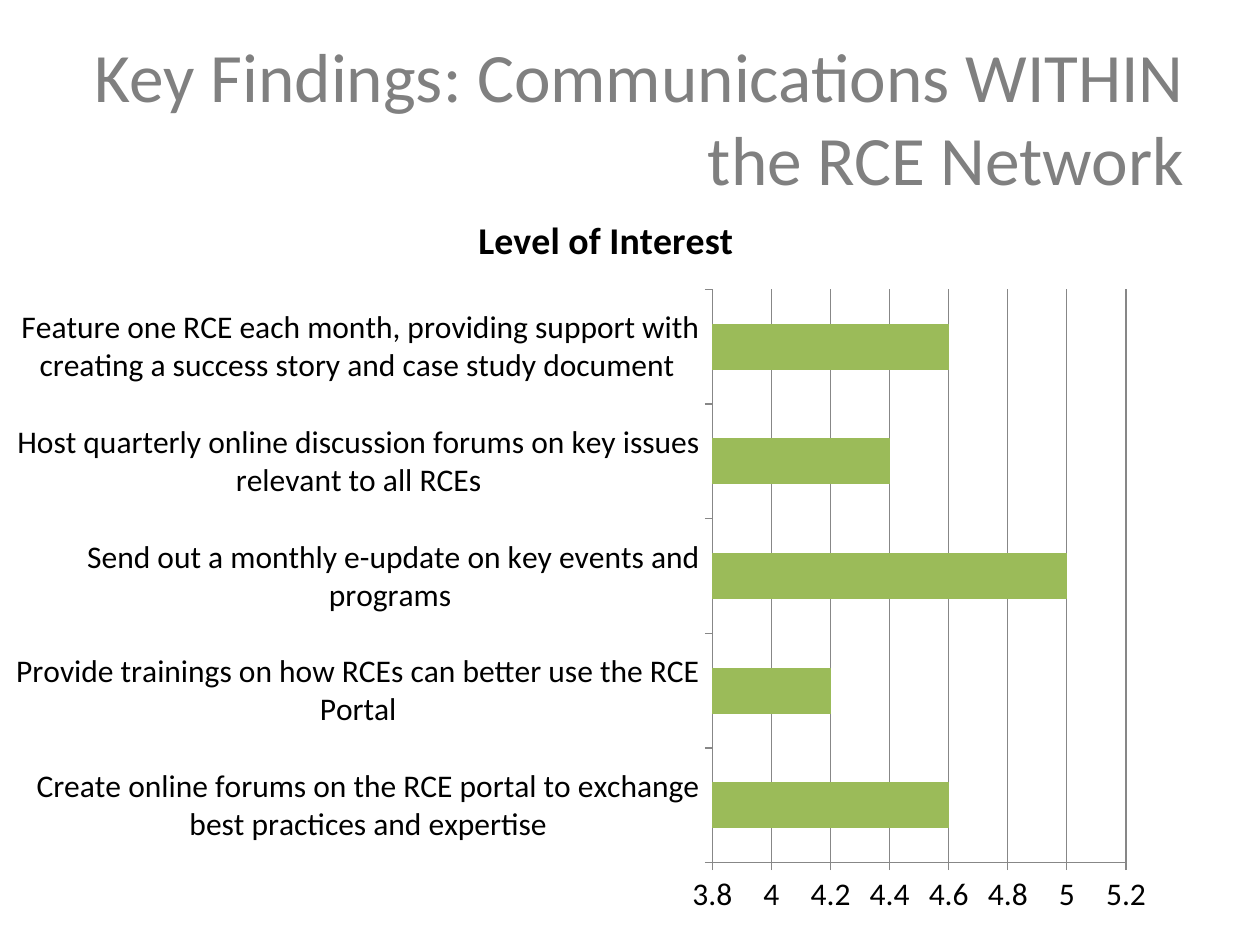
from dataclasses import dataclass

from lxml import etree
from pptx import Presentation
from pptx import util as u
from pptx.chart.chart import Chart
from pptx.chart.data import CategoryChartData
from pptx.dml.color import RGBColor
from pptx.enum import chart as ch
from pptx.enum import text
from pptx.oxml import ns

FONT = "Calibri"
COLORS = {"title": "808080", "text": "000000", "bar": "9BBB59", "line": "878787"}


@dataclass
class Finding:
    label: str
    interest: float


FINDINGS = [
    Finding("Create online forums on the RCE portal to exchange best practices and expertise", 4.6),
    Finding("Provide trainings on how RCEs can better use the RCE Portal", 4.2),
    Finding("Send out a monthly e-update on key events and programs ", 5),
    Finding("Host quarterly online discussion forums on key issues relevant to all RCEs", 4.4),
    Finding("Feature one RCE each month, providing support with creating a success story "
            "and case study document ", 4.6),
]


def rgb(name: str) -> RGBColor:
    return RGBColor.from_string(COLORS[name])


def style_font(font, size: float, color: str, bold: bool = False) -> None:
    font.name, font.size, font.bold = FONT, u.Pt(size), bold
    font.color.rgb = rgb(color)


def style_line(line) -> None:
    line.color.rgb = rgb("line")
    line.width = u.Pt(0.75)


def set_plot_area(chart: Chart, **fractions: float) -> None:
    """Fix the inner plot area as fractions (x, y, w, h) of the chart."""
    plot_area = chart._chartSpace.chart.plotArea
    for old in plot_area.findall(ns.qn("c:layout")):
        plot_area.remove(old)
    layout = etree.Element(ns.qn("c:layout"))
    manual = etree.SubElement(layout, ns.qn("c:manualLayout"))
    settings = {"layoutTarget": "inner", "xMode": "edge", "yMode": "edge", **fractions}
    for tag, value in settings.items():
        etree.SubElement(manual, ns.qn(f"c:{tag}")).set("val", str(value))
    plot_area.insert(0, layout)


def add_title(slide) -> None:
    sp = slide.shapes.title
    sp.left, sp.top, sp.width, sp.height = map(u.Inches, (0.5, 0.3, 9, 1.25))
    tf = sp.text_frame
    tf.text = "Key Findings: Communications WITHIN the RCE Network"
    tf.word_wrap = True
    tf.vertical_anchor = text.MSO_ANCHOR.MIDDLE
    p = tf.paragraphs[0]
    p.alignment = text.PP_ALIGN.RIGHT
    style_font(p.font, 39.6, "title")


def add_interest_chart(slide) -> None:
    name = "Level of Interest"
    data = CategoryChartData()
    data.categories = [f.label for f in FINDINGS]
    data.add_series(name, [f.interest for f in FINDINGS])
    chart = slide.shapes.add_chart(
        ch.XL_CHART_TYPE.BAR_CLUSTERED,
        *map(u.Inches, (0.12, 1.47, 9.38, 5.91)), data).chart
    style_font(chart.font, 18, "text")
    chart.has_legend = False
    chart.has_title = True
    tf = chart.chart_title.text_frame
    tf.text = name
    style_font(tf.paragraphs[0].font, 21.6, "text", bold=True)

    plot = chart.plots[0]
    plot.gap_width = 150
    plot.vary_by_categories = False
    fill = plot.series[0].format.fill
    fill.solid()
    fill.fore_color.rgb = rgb("bar")

    for axis in (chart.category_axis, chart.value_axis):
        axis.major_tick_mark = ch.XL_TICK_MARK.OUTSIDE
        axis.minor_tick_mark = ch.XL_TICK_MARK.NONE
        style_line(axis.format.line)
    axis = chart.value_axis
    axis.minimum_scale, axis.maximum_scale, axis.major_unit = 3.8, 5.2, 0.2
    axis.has_major_gridlines = True
    style_line(axis.major_gridlines.format.line)
    axis.tick_labels.number_format = "General"
    axis.tick_labels.number_format_is_linked = False
    set_plot_area(chart, x=0.59, y=0.14, w=0.35, h=0.77)


def main() -> None:
    prs = Presentation()
    prs.slide_width, prs.slide_height = u.Inches(10), u.Inches(7.5)
    slide = prs.slides.add_slide(prs.slide_layouts[5])
    add_title(slide)
    add_interest_chart(slide)
    prs.save("out.pptx")


if __name__ == "__main__":
    main()
